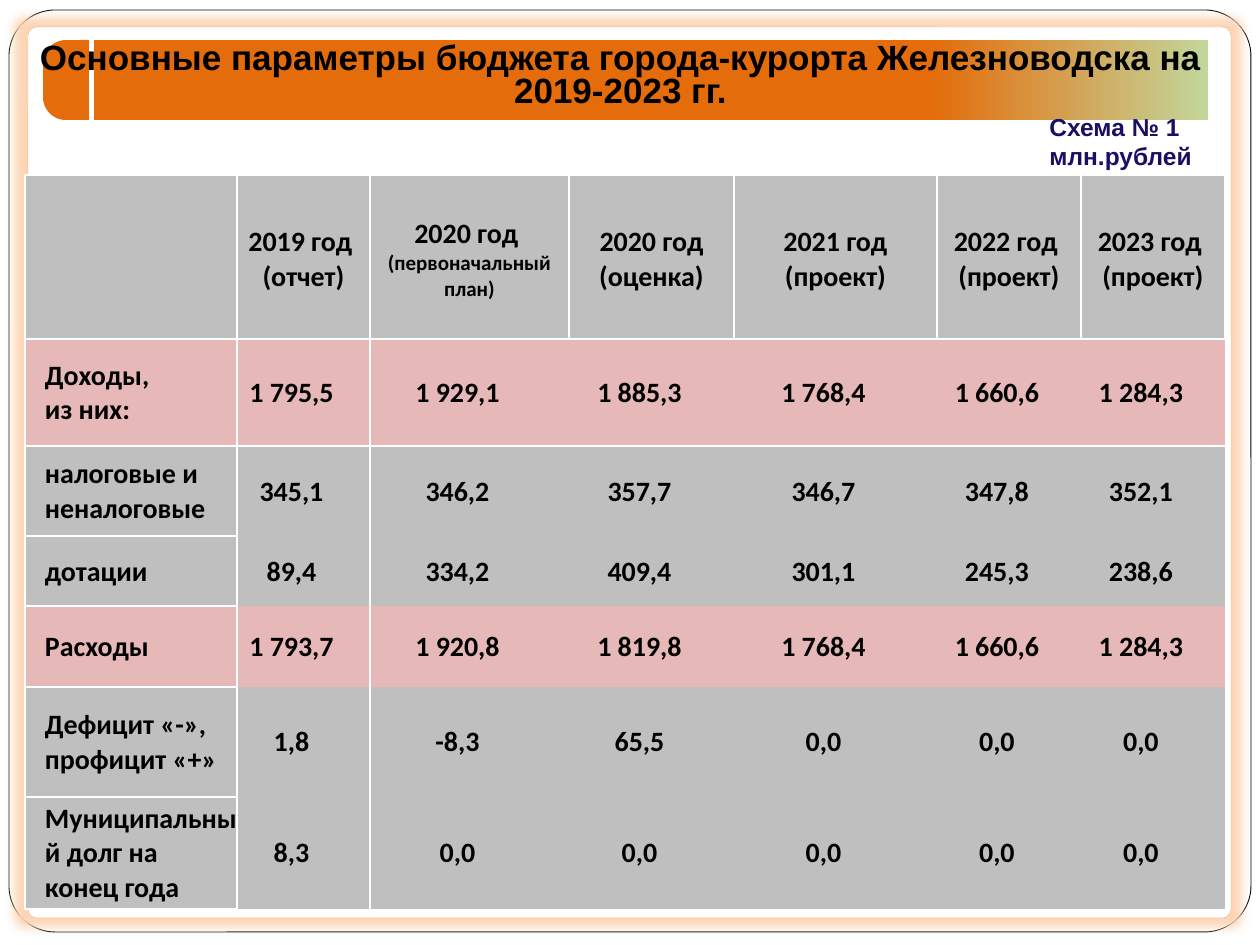
"""Build the budget parameters slide: framed page, title band and table."""
import pptx
import pptx.util
import pptx.dml.color
import pptx.enum.shapes
import pptx.enum.text
import pptx.oxml
import pptx.oxml.ns

TITLE = "Основные параметры бюджета города-курорта Железноводска на 2019-2023 гг."
SCHEME = "Схема № 1"
UNIT = "млн.рублей"
HEADS = [
    ("2019 год \n(отчет)", ""),
    ("2020 год \n", "(первоначальный план)"),
    ("2020 год (оценка)", ""),
    ("2021 год\n(проект)", ""),
    ("2022 год \n(проект)", ""),
    ("2023 год \n(проект)", ""),
]
ROWS = [
    (["Доходы,", "из них:"], ["1 795,5", "1 929,1", "1 885,3", "1 768,4", "1 660,6", "1 284,3"], "rose"),
    (["налоговые и неналоговые"], ["345,1", "346,2", "357,7", "346,7", "347,8", "352,1"], "gray"),
    (["дотации"], ["89,4", "334,2", "409,4", "301,1", "245,3", "238,6"], "gray"),
    (["Расходы"], ["1 793,7", "1 920,8", "1 819,8", "1 768,4", "1 660,6", "1 284,3"], "rose"),
    (["Дефицит «-»,", "профицит «+»"], ["1,8", "-8,3", "65,5", "0,0", "0,0", "0,0"], "gray"),
    (["Муниципальный долг на конец года"], ["8,3", "0,0", "0,0", "0,0", "0,0", "0,0"], "gray"),
]
WIDTHS = [212, 133, 199, 165, 203, 144, 144]
HEIGHTS = [164, 107, 90, 70, 81, 110, 112]
THEME = {
    "white": "FFFFFF", "black": "000000", "orange": "E46C0A", "green": "C3D69B",
    "glow": "FCD5B5", "gray": "BFBFBF", "rose": "E6B9B8", "navy": "190F65",
    "title": 20, "note": 14, "body": 16, "small": 12,
    "sans": "Arial", "table": "Calibri",
}
PLAIN = "{2D5ABB26-0587-4C30-8999-92F81FD0307C}"
KIND = pptx.enum.shapes.MSO_SHAPE
ALIGN = pptx.enum.text.PP_ALIGN
NS = pptx.oxml.ns.nsdecls("a")


def px(size):
    return pptx.util.Emu(round(size * 914400 / 126))


def tint(name):
    return pptx.dml.color.RGBColor.from_string(THEME[name])


def style(font, size, face, color):
    font.size = pptx.util.Pt(THEME[size])
    font.name = THEME[face]
    font.bold = True
    font.color.rgb = tint(color)


def shape(slide, kind, box, fill, adjust=()):
    item = slide.shapes.add_shape(kind, *map(px, box))
    item.shadow.inherit = False
    item.fill.solid()
    item.fill.fore_color.rgb = tint(fill)
    item.line.fill.background()
    for index, value in enumerate(adjust):
        item.adjustments[index] = value
    return item


def edge(item, color, width):
    item.line.color.rgb = tint(color)
    item.line.width = pptx.util.Pt(width)


def frame(slide):
    outer = shape(slide, KIND.ROUNDED_RECTANGLE, (9, 10, 1242, 922), "white", [0.05])
    edge(outer, "black", 0.5)
    inner = shape(slide, KIND.ROUNDED_RECTANGLE, (28, 27, 1203, 891), "white", [0.01])
    edge(inner, "orange", 0.25)
    color = inner.line._ln.find(".//" + pptx.oxml.ns.qn("a:srgbClr"))
    color.append(pptx.oxml.parse_xml(f'<a:alpha {NS} val="39000"/>'))
    glow = pptx.oxml.parse_xml(
        f'<a:outerShdw {NS} blurRad="63500" sx="102000" sy="102000" algn="ctr" rotWithShape="0">'
        f'<a:srgbClr val="{THEME["glow"]}"/></a:outerShdw>')
    inner._element.spPr.find(pptx.oxml.ns.qn("a:effectLst")).append(glow)


def band(slide):
    tab = shape(slide, KIND.ROUND_2_SAME_RECTANGLE, (26, 57, 80, 46), "orange", [0.5, 0])
    tab.rotation = 270
    bar = shape(slide, KIND.RECTANGLE, (94, 40, 1114, 80), "orange")
    bar.fill.gradient()
    bar.fill.gradient_angle = 0
    for stop, (place, name) in zip(bar.fill.gradient_stops, [(0.75, "orange"), (1, "green")]):
        stop.position = place
        stop.color.rgb = tint(name)


def label(slide, text, box, size, color, wrap=True):
    body = slide.shapes.add_textbox(*map(px, box)).text_frame
    body.word_wrap = wrap
    para = body.paragraphs[0]
    para.text = text
    style(para.font, size, "sans", color)
    return para


def border(cell, sides):
    props = cell._tc.get_or_add_tcPr()
    for index, side in enumerate(sides):
        props.insert(index, pptx.oxml.parse_xml(
            f'<a:ln{side} {NS} w="12700"><a:solidFill>'
            f'<a:srgbClr val="{THEME["white"]}"/></a:solidFill></a:ln{side}>'))


def write(cell, lines, fill, inset, sides, align=ALIGN.CENTER):
    cell.fill.solid()
    cell.fill.fore_color.rgb = tint(fill)
    cell.vertical_anchor = pptx.enum.text.MSO_ANCHOR.MIDDLE
    cell.margin_left, cell.margin_top, cell.margin_right, cell.margin_bottom = map(px, inset)
    border(cell, sides)
    for index, line in enumerate(lines):
        body = cell.text_frame
        para = body.add_paragraph() if index else body.paragraphs[0]
        para.text = line
        para.alignment = align
        style(para.font, "body", "table", "black")


def table(slide):
    box = (25, 175, sum(WIDTHS), sum(HEIGHTS))
    grid = slide.shapes.add_table(len(HEIGHTS), len(WIDTHS), *map(px, box)).table
    grid._tbl.tblPr.find(pptx.oxml.ns.qn("a:tableStyleId")).text = PLAIN
    for col, width in zip(grid.columns, WIDTHS):
        col.width = px(width)
    for row, height in zip(grid.rows, HEIGHTS):
        row.height = px(height)
    whole = "LRTB"
    write(grid.cell(0, 0), [], "gray", (1, 5, 1, 0), whole)
    for col, (main, extra) in enumerate(HEADS, 1):
        cell = grid.cell(0, col)
        write(cell, [main], "gray", (1, 5, 1, 0), whole)
        if extra:
            run = cell.text_frame.paragraphs[0].add_run()
            run.text = extra
            run.font.size = pptx.util.Pt(THEME["small"])
    for row, (name, values, fill) in enumerate(ROWS, 1):
        write(grid.cell(row, 0), name, fill, (20, 1, 0, 0), whole, ALIGN.LEFT)
        for col, value in enumerate(values, 1):
            sides = ("L" if col == 1 else "") + ("T" if row == 1 else "")
            write(grid.cell(row, col), [value], fill, (1, 1, 25, 0), sides)


def main():
    deck = pptx.Presentation()
    deck.slide_width, deck.slide_height = px(1260), px(945)
    slide = deck.slides.add_slide(deck.slide_layouts[6])
    frame(slide)
    band(slide)
    table(slide)
    title = label(slide, TITLE, (25, 37, 1191, 81), "title", "black")
    title.alignment = ALIGN.CENTER
    title.line_spacing = 0.8
    label(slide, SCHEME, (1037, 106, 189, 43), "note", "navy")
    label(slide, UNIT, (1037, 135, 169, 43), "note", "navy", False)
    deck.save("out.pptx")


if __name__ == "__main__":
    main()
